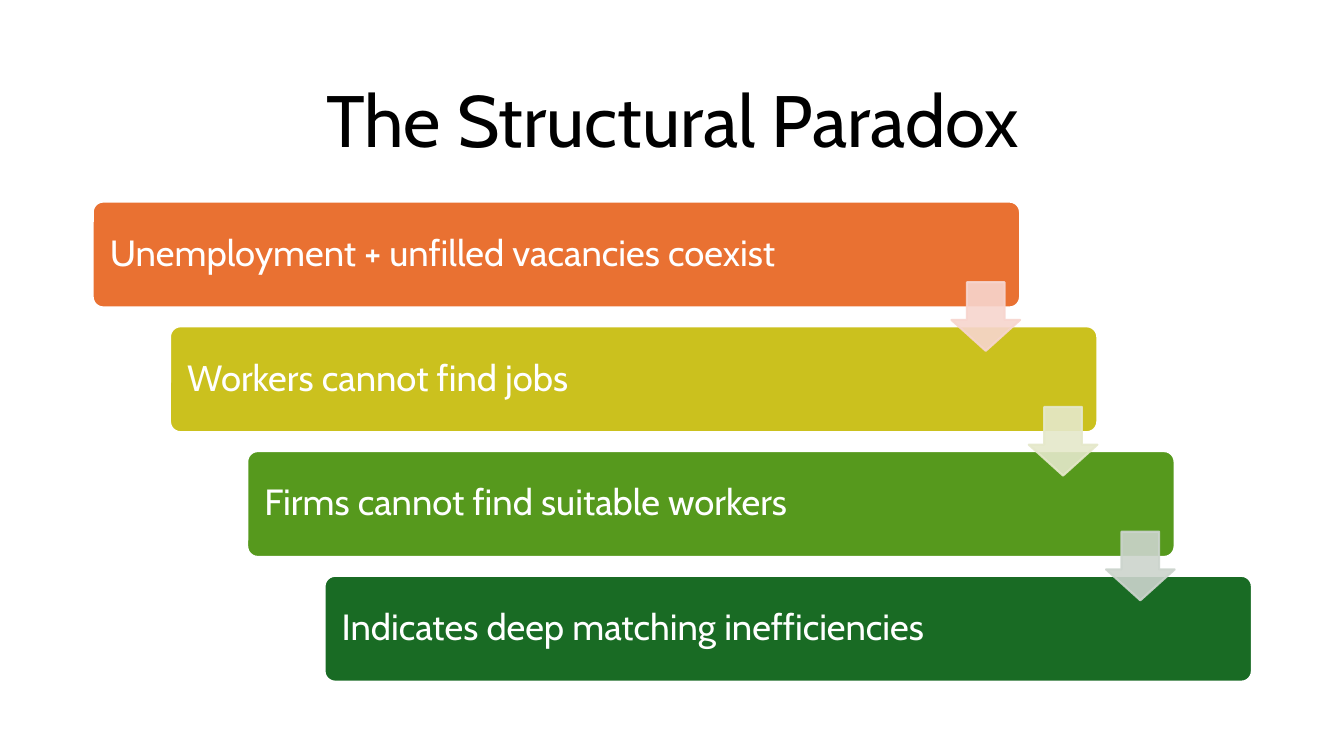
import pptx
import pptx.dml.color
import pptx.enum.shapes
import pptx.enum.text
import pptx.oxml.ns
import pptx.util
from lxml import etree

Pt = pptx.util.Pt
RGBColor = pptx.dml.color.RGBColor
SHAPES = pptx.enum.shapes.MSO_SHAPE
ALIGN = pptx.enum.text.PP_ALIGN

BLACK = RGBColor(0x00, 0x00, 0x00)
WHITE = RGBColor(0xFF, 0xFF, 0xFF)
ORANGE = RGBColor(0xE9, 0x71, 0x32)
YELLOW = RGBColor(0xCB, 0xC1, 0x1E)
GREEN = RGBColor(0x56, 0x99, 0x1D)
DARK_GREEN = RGBColor(0x19, 0x6B, 0x24)
PALE_ORANGE = RGBColor(0xF7, 0xD5, 0xCE)
PALE_YELLOW = RGBColor(0xE5, 0xE8, 0xCA)
PALE_GREEN = RGBColor(0xCC, 0xD4, 0xCD)

STEPS = [
    ("Unemployment + unfilled vacancies coexist", ORANGE),
    ("Workers cannot find jobs", YELLOW),
    ("Firms cannot find suitable workers", GREEN),
    ("Indicates deep matching inefficiencies", DARK_GREEN),
]
ARROW_COLORS = [PALE_ORANGE, PALE_YELLOW, PALE_GREEN]

LEFT, TOP = 66.24, 144
BAR_WIDTH, BAR_HEIGHT = 662.4, 75.6
STEP_X, STEP_Y = 55.2, 89.1
ARROW_SIZE, ARROW_DROP = 49, 57.6


def write_text(shape, text, size, color, align):
    frame = shape.text_frame
    frame.word_wrap = True
    frame.vertical_anchor = pptx.enum.text.MSO_ANCHOR.MIDDLE
    frame.text = text
    para = frame.paragraphs[0]
    para.alignment = align
    para.line_spacing = 0.9
    font = para.runs[0].font
    font.name = "Cabin"
    font.size = Pt(size)
    font.color.rgb = color


def add_block(kind, left, top, width, height, fill, line):
    block = page.shapes.add_shape(kind, Pt(left), Pt(top), Pt(width), Pt(height))
    block.shadow.inherit = False
    block.fill.solid()
    block.fill.fore_color.rgb = fill
    block.line.color.rgb = line
    block.line.width = Pt(1.5)
    return block


deck = pptx.Presentation()
deck.slide_width, deck.slide_height = Pt(960), Pt(540)
page = deck.slides.add_slide(deck.slide_layouts[6])

# Title
title = page.shapes.add_textbox(Pt(LEFT), Pt(43.9), Pt(828), Pt(89.3))
write_text(title, "The Structural Paradox", 52, BLACK, ALIGN.CENTER)

# Staircase of bars
for index, (text, color) in enumerate(STEPS):
    bar = add_block(SHAPES.ROUNDED_RECTANGLE, LEFT + index * STEP_X,
                    TOP + index * STEP_Y, BAR_WIDTH, BAR_HEIGHT, color, WHITE)
    bar.adjustments[0] = 0.1
    bar.text_frame.margin_left = Pt(10)
    write_text(bar, text, 26, WHITE, ALIGN.LEFT)

# Translucent arrows, flush with the right end of each upper bar
for index, color in enumerate(ARROW_COLORS):
    arrow = add_block(SHAPES.DOWN_ARROW,
                      LEFT + BAR_WIDTH - ARROW_SIZE + index * STEP_X,
                      TOP + ARROW_DROP + index * STEP_Y,
                      ARROW_SIZE, ARROW_SIZE, color, color)
    arrow.adjustments[0] = 0.55
    arrow.adjustments[1] = 0.45
    properties = arrow.element.spPr
    for paint in properties.iter(pptx.oxml.ns.qn("a:srgbClr")):
        etree.SubElement(paint, pptx.oxml.ns.qn("a:alpha"), val="90000")

deck.save("out.pptx")
